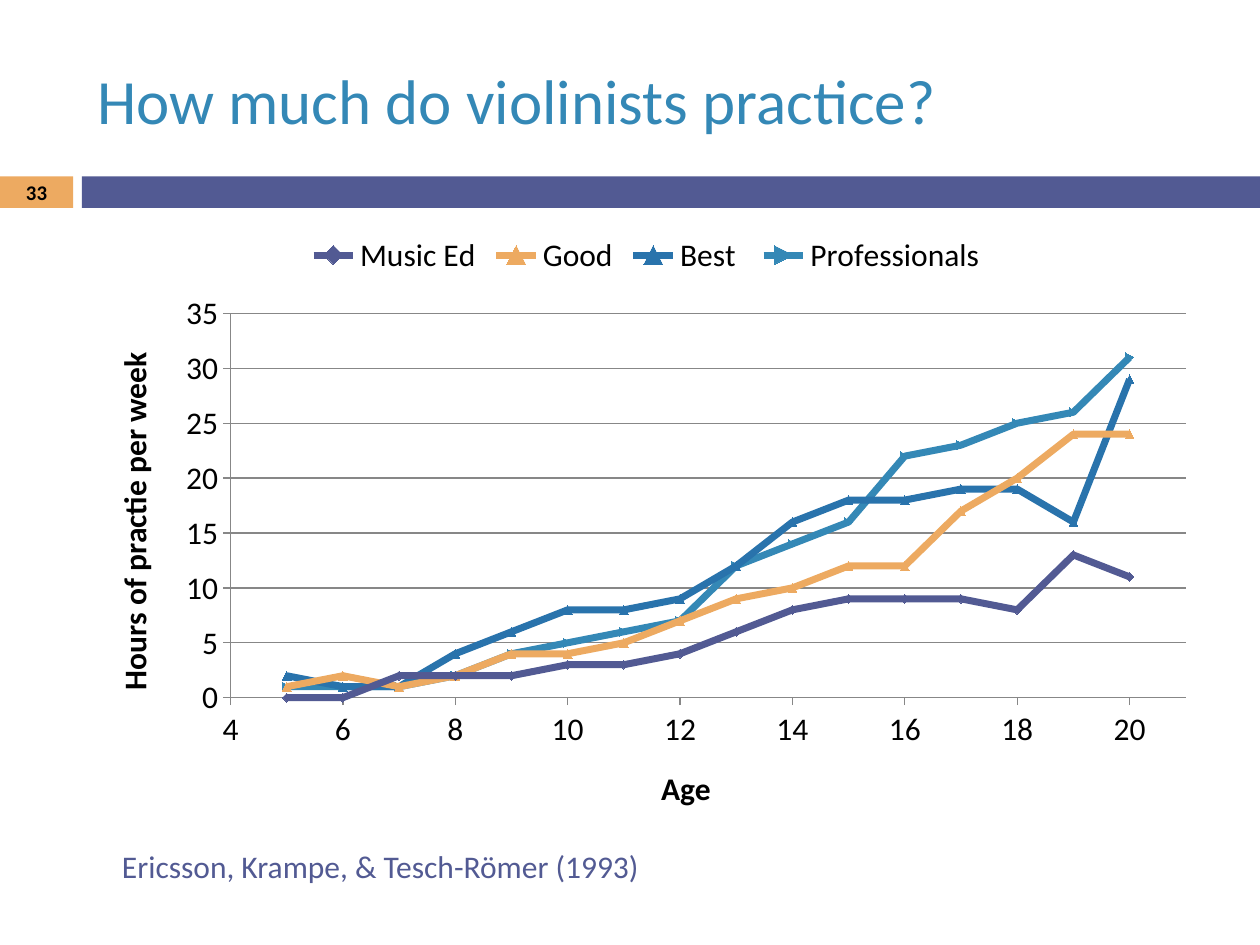
from dataclasses import dataclass

from lxml.etree import SubElement
from pptx import Presentation
from pptx.chart.axis import ValueAxis
from pptx.chart.data import XyChartData
from pptx.dml.color import RGBColor
from pptx.enum.chart import XL_CHART_TYPE as Kind
from pptx.enum.chart import XL_LEGEND_POSITION as Spot
from pptx.enum.chart import XL_MARKER_STYLE as Mark
from pptx.enum.chart import XL_TICK_MARK as Tick
from pptx.enum.shapes import MSO_SHAPE as Form
from pptx.enum.text import MSO_ANCHOR as Anchor
from pptx.enum.text import PP_ALIGN as Align
from pptx.oxml.ns import qn
from pptx.util import Inches, Pt

NAVY, GOLD, BLUE, TEAL = "525A93", "EDAA61", "2973AC", "3488B6"
BLACK, GREY = "000000", "878787"
AGES = range(5, 21)


@dataclass
class Box:
    """Place and size in inches."""
    left: float
    top: float
    width: float
    height: float

    def emu(self) -> list:
        """Return the four lengths."""
        return [Inches(n) for n in (self.left, self.top, self.width, self.height)]


@dataclass
class Group:
    """One group of violinists with weekly hours by age."""
    name: str
    tint: str
    mark: Mark
    hours: list


GROUPS = [
    Group("Music Ed", NAVY, Mark.DIAMOND,
          [0, 0, 2, 2, 2, 3, 3, 4, 6, 8, 9, 9, 9, 8, 13, 11]),
    Group("Good", GOLD, Mark.TRIANGLE,
          [1, 2, 1, 2, 4, 4, 5, 7, 9, 10, 12, 12, 17, 20, 24, 24]),
    Group("Best ", BLUE, Mark.TRIANGLE,
          [2, 1, 1, 4, 6, 8, 8, 9, 12, 16, 18, 18, 19, 19, 16, 29]),
    Group("Professionals", TEAL, Mark.DOT,
          [1, 1, 1, 2, 4, 5, 6, 7, 12, 14, 16, 22, 23, 25, 26, 31]),
]


def apply(item, form: dict) -> None:
    """Set each named attribute."""
    for key, value in form.items():
        setattr(item, key, value)


def color(code: str) -> RGBColor:
    """Turn a hex string into a colour."""
    return RGBColor.from_string(code)


def style(font, size: float, tint: str = BLACK, bold: bool = False) -> None:
    """Format a font."""
    apply(font, {"name": "Calibri", "size": Pt(size), "bold": bold})
    font.color.rgb = color(tint)


def write(frame, text: str, size: float, tint: str, bold: bool = False,
          align: Align = Align.LEFT, anchor: Anchor = Anchor.TOP) -> None:
    """Fill a text frame with one line."""
    apply(frame, {"word_wrap": True, "vertical_anchor": anchor})
    line = frame.paragraphs[0]
    line.alignment = align
    run = line.add_run()
    run.text = text
    style(run.font, size, tint, bold)


def bar(slide, box: Box, tint: str) -> None:
    """Draw a plain filled bar."""
    shape = slide.shapes.add_shape(Form.RECTANGLE, *box.emu())
    shape.shadow.inherit = False
    shape.fill.solid()
    shape.fill.fore_color.rgb = color(tint)
    shape.line.fill.background()


def scale(axis: ValueAxis, title: str, form: dict) -> None:
    """Format an axis and its title."""
    apply(axis, {"major_tick_mark": Tick.OUTSIDE, "minor_tick_mark": Tick.NONE, **form})
    style(axis.tick_labels.font, 18)
    apply(axis.tick_labels, {"number_format": "0", "number_format_is_linked": False})
    axis.format.line.color.rgb = color(GREY)
    run = axis.axis_title.text_frame.paragraphs[0].add_run()
    run.text = title
    style(run.font, 18, bold=True)


def place(plot, spots: dict) -> None:
    """Fix the inner plot area as shares of the chart."""
    for old in plot.findall(qn("c:layout")):
        plot.remove(old)
    layout = SubElement(plot, qn("c:layout"))
    plot.insert(0, layout)
    manual = SubElement(layout, qn("c:manualLayout"))
    parts = {"layoutTarget": "inner", "xMode": "edge", "yMode": "edge", **spots}
    for key, value in parts.items():
        SubElement(manual, qn(f"c:{key}")).set("val", str(value))


def graph(slide, box: Box) -> None:
    """Add the practice chart."""
    data = XyChartData()
    for group in GROUPS:
        row = data.add_series(group.name)
        for age, hours in zip(AGES, group.hours):
            row.add_data_point(age, hours)
    chart = slide.shapes.add_chart(Kind.XY_SCATTER_LINES, *box.emu(), data).chart
    style(chart.font, 10)
    apply(chart, {"has_title": False, "has_legend": True})
    apply(chart.legend, {"position": Spot.TOP, "include_in_layout": False})
    style(chart.legend.font, 18)
    scale(chart.category_axis, "Age", {
        "minimum_scale": 4, "maximum_scale": 21, "major_unit": 2,
        "has_major_gridlines": False})
    scale(chart.value_axis, "Hours of practie per week", {
        "minimum_scale": 0, "maximum_scale": 35, "major_unit": 5,
        "has_major_gridlines": True})
    chart.value_axis.major_gridlines.format.line.color.rgb = color(GREY)
    chart.plots[0].vary_by_categories = False
    for group, row in zip(GROUPS, chart.plots[0].series):
        row.smooth = False
        apply(row.format.line, {"width": Pt(4)})
        row.format.line.color.rgb = color(group.tint)
        apply(row.marker, {"style": group.mark, "size": 5})
        row.marker.format.fill.solid()
        row.marker.format.fill.fore_color.rgb = color(group.tint)
        row.marker.format.line.color.rgb = color(group.tint)
    place(chart.plots[0]._element.getparent(),
          {"x": 0.13, "y": 0.15, "w": 0.85, "h": 0.62})


def main() -> None:
    """Build and save the slide."""
    deck = Presentation()
    apply(deck, {"slide_width": Inches(10), "slide_height": Inches(7.5)})
    slide = deck.slides.add_slide(deck.slide_layouts[5])
    bar(slide, Box(0, 1.4, 0.58, 0.25), GOLD)
    bar(slide, Box(0.65, 1.4, 9.35, 0.25), NAVY)
    title = slide.shapes.title
    apply(title, dict(zip(("left", "top", "width", "height"),
                          Box(0.67, 0.25, 8.92, 1.08).emu())))
    write(title.text_frame, "How much do violinists practice?", 36, TEAL,
          anchor=Anchor.MIDDLE)
    graph(slide, Box(0.67, 1.75, 8.92, 4.92))
    source = slide.shapes.add_textbox(*Box(0.87, 6.67, 6.03, 0.4).emu())
    write(source.text_frame, "Ericsson, Krampe, & Tesch-Römer (1993)", 18, NAVY)
    number = slide.shapes.add_textbox(*Box(0, 1.39, 0.58, 0.27).emu())
    write(number.text_frame, "33", 11.9, BLACK, True, Align.CENTER, Anchor.MIDDLE)
    deck.save("out.pptx")


if __name__ == "__main__":
    main()
